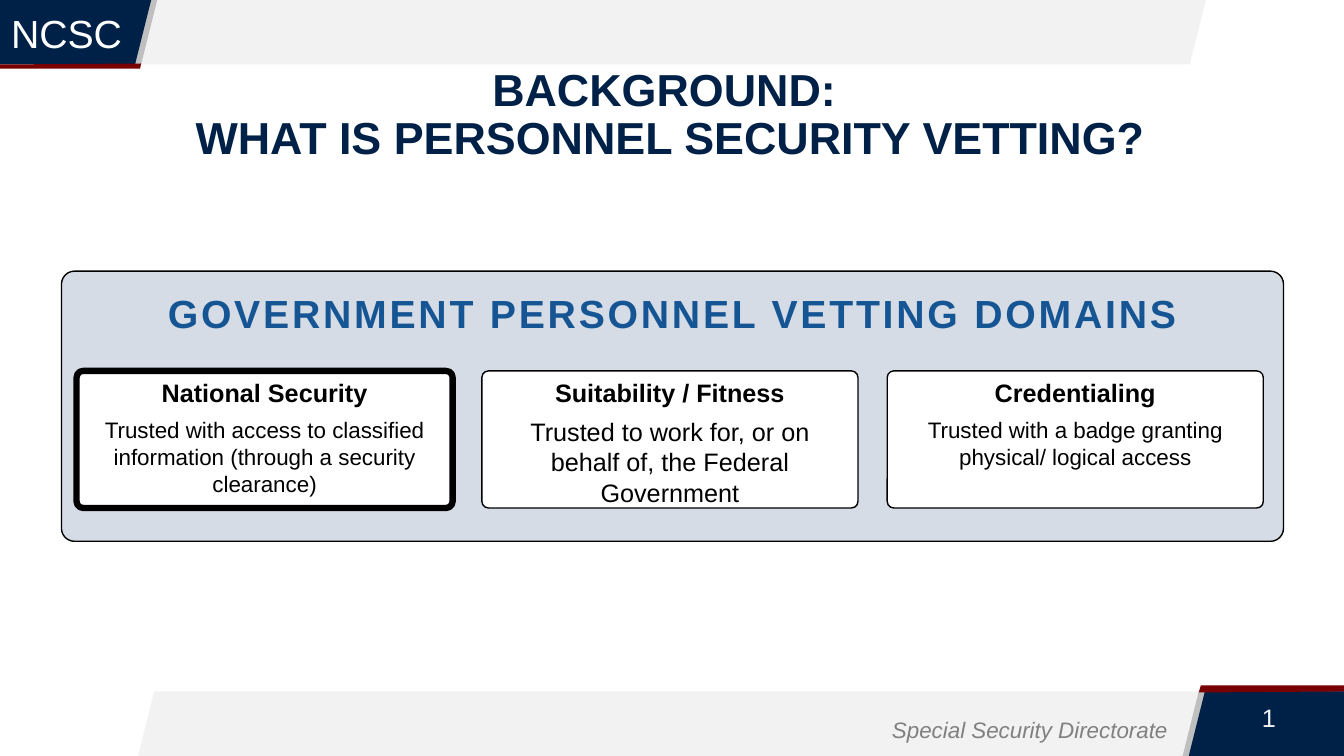
from pptx import Presentation
from pptx.dml.color import RGBColor
from pptx.enum.shapes import MSO_SHAPE
from pptx.enum.text import MSO_ANCHOR, PP_ALIGN
from pptx.util import Inches, Pt

COLORS = {
    "navy": "002147", "red": "790000", "band": "F2F2F2", "edge": "BFBFBF",
    "panel": "D6DCE5", "heading": "155594", "footer": "808080",
    "white": "FFFFFF", "black": "000000",
}


def paint(shape, fill, line=None, width=1):
    shape.shadow.inherit = False
    shape.fill.solid()
    shape.fill.fore_color.rgb = RGBColor.from_string(COLORS[fill])
    if line:
        shape.line.color.rgb = RGBColor.from_string(COLORS[line])
        shape.line.width = Pt(width)
    else:
        shape.line.fill.background()


def style(paragraph, size, color, align=PP_ALIGN.CENTER, bold=False, italic=False):
    paragraph.alignment = align
    for run in paragraph.runs:
        run.font.name = "Arial"
        run.font.size = Pt(size)
        run.font.bold = bold
        run.font.italic = italic
        run.font.color.rgb = RGBColor.from_string(COLORS[color])


prs = Presentation()
prs.slide_width = Inches(13.33)
prs.slide_height = Inches(7.5)
slide = prs.slides.add_slide(prs.slide_layouts[5])
shapes = slide.shapes

bands = [
    (MSO_SHAPE.PARALLELOGRAM, 1.34, 0, 10.62, "band"),
    (MSO_SHAPE.PARALLELOGRAM, 0.8, 0, 0.76, "edge"),
    (MSO_SHAPE.PARALLELOGRAM, 0.74, 0, 0.76, "navy"),
    (MSO_SHAPE.RECTANGLE, 0, 0, 1.34, "navy"),
    (MSO_SHAPE.PARALLELOGRAM, 1.37, 6.86, 10.59, "band"),
    (MSO_SHAPE.PARALLELOGRAM, 11.73, 6.86, 0.76, "edge"),
    (MSO_SHAPE.PARALLELOGRAM, 11.79, 6.86, 1.54, "navy"),
    (MSO_SHAPE.RECTANGLE, 12, 6.86, 1.33, "navy"),
]
for outline, left, top, width, color in bands:
    band = shapes.add_shape(outline, Inches(left), Inches(top), Inches(width), Inches(0.64))
    paint(band, color)

red_strips = [
    [(0, 0.64), (1.4, 0.63), (1.39, 0.68), (0, 0.68)],
    [(13.33, 6.86), (11.89, 6.87), (11.91, 6.8), (13.33, 6.8)],
]
for corners in red_strips:
    points = [(Inches(x), Inches(y)) for x, y in corners]
    builder = shapes.build_freeform(*points[0])
    builder.add_line_segments(points[1:], close=True)
    paint(builder.convert_to_shape(), "red")

labels = [
    ("Special Security Directorate", 7.66, 7.06, 4.02, 0.37, 16, "footer", PP_ALIGN.RIGHT, True, 0.1, 0.05),
    ("NCSC", 0.11, 0.09, 1.26, 0.47, 28, "white", PP_ALIGN.LEFT, False, 0, 0),
    ("1", 11.94, 6.92, 1.29, 0.4, 18, "band", PP_ALIGN.CENTER, False, 0.1, 0.05),
]
for text, left, top, width, height, size, color, align, italic, side, edge in labels:
    label = shapes.add_textbox(Inches(left), Inches(top), Inches(width), Inches(height)).text_frame
    label.word_wrap = True
    label.margin_left = label.margin_right = Inches(side)
    label.margin_top = label.margin_bottom = Inches(edge)
    label.text = text
    style(label.paragraphs[0], size, color, align, italic=italic)

title = shapes.title
title.left, title.top = Inches(0.9), Inches(0.87)
title.width, title.height = Inches(11.5), Inches(0.56)
title_frame = title.text_frame
title_frame.vertical_anchor = MSO_ANCHOR.MIDDLE
title_frame.margin_left = title_frame.margin_right = Inches(0.05)
title_frame.margin_top = title_frame.margin_bottom = Inches(0.05)
title_line = title_frame.paragraphs[0]
title_line.add_run().text = "BACKGROUND: "
title_line.add_line_break()
title_line.add_run().text = "WHAT IS PERSONNEL SECURITY VETTING?"
title_line.line_spacing = 0.9
style(title_line, 32, "navy", bold=True)

domains = shapes.add_shape(
    MSO_SHAPE.ROUNDED_RECTANGLE, Inches(0.61), Inches(2.69), Inches(12.12), Inches(2.68))
domains.adjustments[0] = 0.048
paint(domains, "panel", "black")
domains_frame = domains.text_frame
domains_frame.vertical_anchor = MSO_ANCHOR.TOP
domains_frame.margin_top = Inches(0.2)
domains_frame.text = "GOVERNMENT PERSONNEL VETTING DOMAINS"
domains_heading = domains_frame.paragraphs[0]
domains_heading.line_spacing = 0.9
domains_heading.space_before = Pt(10)
style(domains_heading, 28, "heading", bold=True)
domains_heading.runs[0].font._element.set("spc", "200")

cards = [
    ("National Security",
     "Trusted with access to classified information (through a security clearance)", 16, 4.5),
    ("Suitability / Fitness",
     "Trusted to work for, or on behalf of, the Federal Government", 18, 1),
    ("Credentialing",
     "Trusted with a badge granting physical/ logical access", 16, 1),
]
for index, (domain, meaning, size, border) in enumerate(cards):
    card = shapes.add_shape(
        MSO_SHAPE.ROUNDED_RECTANGLE, Inches(0.76 + 4.02 * index), Inches(3.68),
        Inches(3.73), Inches(1.36))
    card.adjustments[0] = 0.048
    paint(card, "white", "black", border)
    card_frame = card.text_frame
    card_frame.word_wrap = True
    card_frame.vertical_anchor = MSO_ANCHOR.TOP
    card_frame.text = domain
    style(card_frame.paragraphs[0], 18, "black", bold=True)
    card_frame.paragraphs[0].space_after = Pt(6)
    description = card_frame.add_paragraph()
    description.text = meaning
    style(description, size, "black")

prs.save("out.pptx")
